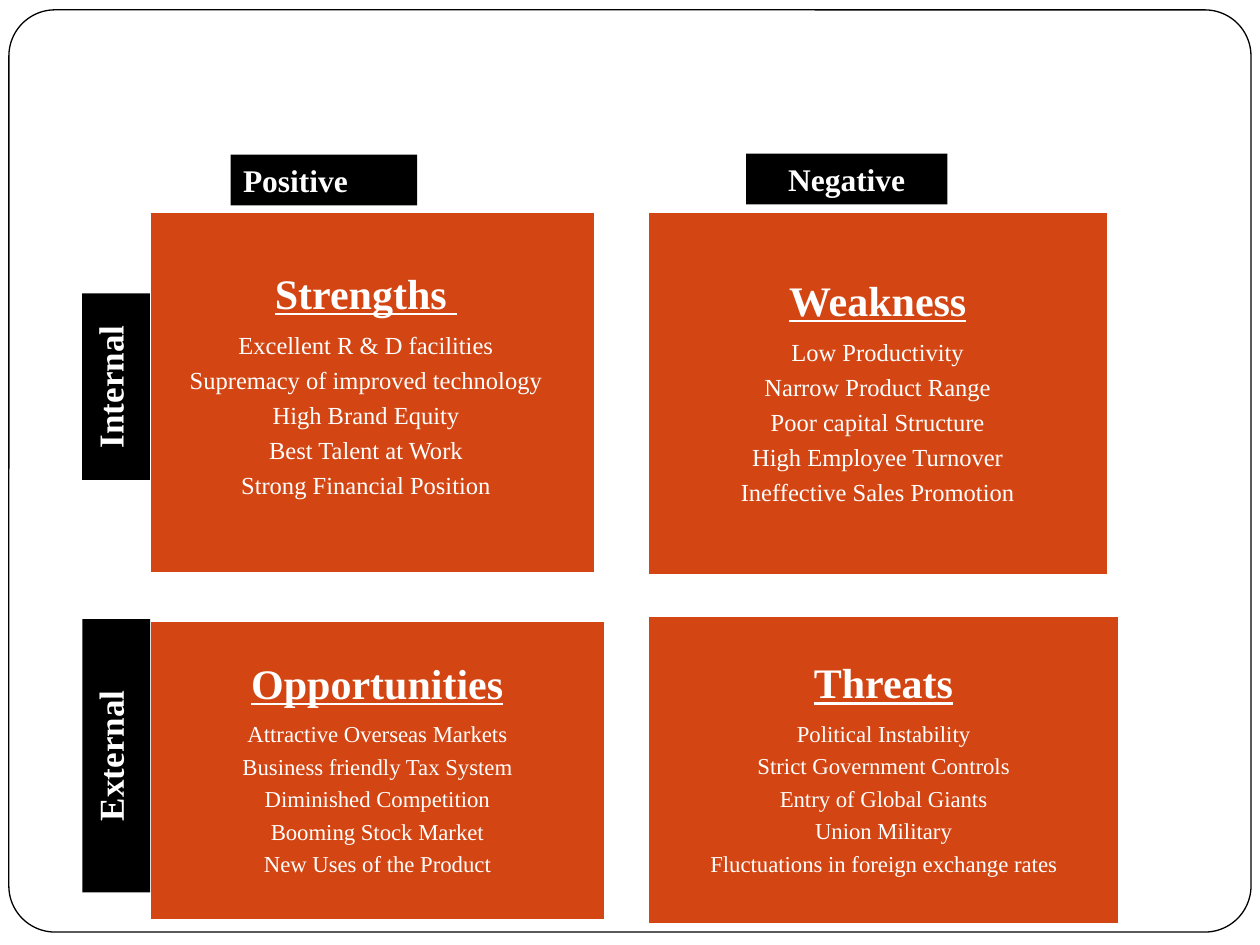
from pptx import Presentation
from pptx.dml.color import RGBColor
from pptx.enum.shapes import MSO_SHAPE
from pptx.enum.text import MSO_ANCHOR, PP_ALIGN
from pptx.util import Cm, Pt

COLORS = {"paper": "FFFFFF", "ink": "000000", "quadrant": "D34614", "text": "FFFFFF"}
QUADRANTS = [
    ("Strengths ", (3.02, 4.27, 8.97, 7.29), 14, (0, 0, 0.25, 0.25), [
        "Excellent R & D facilities", "Supremacy of improved technology",
        "High Brand Equity", "Best Talent at Work", "Strong Financial Position"]),
    ("Weakness", (13.06, 4.27, 9.27, 7.32), 14, (0.25,) * 4, [
        "Low Productivity", "Narrow Product Range", "Poor capital Structure",
        "High Employee Turnover", "Ineffective Sales Promotion"]),
    ("Opportunities", (3.02, 12.52, 9.17, 6.02), 13, (0.25,) * 4, [
        "Attractive Overseas Markets", "Business friendly Tax System",
        "Diminished Competition", "Booming Stock Market", "New Uses of the Product"]),
    ("Threats", (13.06, 12.42, 9.5, 6.2), 13, (0.25,) * 4, [
        "Political Instability", "Strict Government Controls", "Entry of Global Giants",
        "Union Military", "Fluctuations in foreign exchange rates"]),
]
AXIS_LABELS = [
    ("Internal", (0.46, 7.11, 3.76, 1.37), 20, 270, PP_ALIGN.CENTER),
    ("External", (-0.41, 14.55, 5.51, 1.37), 20, 270, PP_ALIGN.CENTER),
    ("Positive", (4.65, 3.12, 3.76, 1.02), 18, 0, PP_ALIGN.LEFT),
    ("Negative", (15.04, 3.1, 4.06, 1.02), 18, 0, PP_ALIGN.CENTER),
]


class SwotSlide:
    font = "Times New Roman"
    heading_size = 24
    line_spacing = 0.9
    space_ratio = 0.35

    def __init__(self, slide):
        self.slide = slide

    def box(self, kind, place, fill, line=None, width=1):
        shape = self.slide.shapes.add_shape(kind, *map(Cm, place))
        shape.shadow.inherit = False
        shape.fill.solid()
        shape.fill.fore_color.rgb = RGBColor.from_string(COLORS[fill])
        if line:
            shape.line.color.rgb = RGBColor.from_string(COLORS[line])
            shape.line.width = Pt(width)
        else:
            shape.line.fill.background()
        return shape

    def run(self, paragraph, text, size, bold=False, underline=False):
        run = paragraph.add_run()
        run.text = text
        run.font.name = self.font
        run.font.size = Pt(size)
        run.font.bold = bold
        run.font.underline = underline
        run.font.color.rgb = RGBColor.from_string(COLORS["text"])

    def margins(self, frame, left, top, right, bottom):
        frame.margin_left, frame.margin_top = Cm(left), Cm(top)
        frame.margin_right, frame.margin_bottom = Cm(right), Cm(bottom)

    def border(self):
        frame = self.box(MSO_SHAPE.ROUNDED_RECTANGLE, (0.18, 0.2, 25.04, 18.59),
                         "paper", "ink", 0.75)
        frame.adjustments[0] = 0.05

    def quadrant(self, heading, place, size, insets, factors):
        frame = self.box(MSO_SHAPE.RECTANGLE, place, "quadrant", "paper").text_frame
        frame.word_wrap = True
        frame.vertical_anchor = MSO_ANCHOR.MIDDLE
        self.margins(frame, *insets)
        title = frame.paragraphs[0]
        self.run(title, heading, self.heading_size, bold=True, underline=True)
        for index, factor in enumerate(factors):
            item = frame.add_paragraph()
            above = size if index else self.heading_size
            item.space_before = Pt(round(above * self.space_ratio, 1))
            self.run(item, factor, size)
        for paragraph in frame.paragraphs:
            paragraph.alignment = PP_ALIGN.CENTER
            paragraph.line_spacing = self.line_spacing

    def axis_label(self, text, place, size, rotation, alignment):
        label = self.box(MSO_SHAPE.RECTANGLE, place, "ink")
        label.rotation = rotation
        frame = label.text_frame
        frame.word_wrap = True
        frame.vertical_anchor = MSO_ANCHOR.TOP
        self.margins(frame, 0.25, 0.13, 0.25, 0.13)
        paragraph = frame.paragraphs[0]
        paragraph.alignment = alignment
        self.run(paragraph, text, size, bold=True)


def main():
    deck = Presentation()
    deck.slide_width, deck.slide_height = Cm(25.4), Cm(19.05)
    swot = SwotSlide(deck.slides.add_slide(deck.slide_layouts[6]))
    swot.border()
    for quadrant in QUADRANTS:
        swot.quadrant(*quadrant)
    for label in AXIS_LABELS:
        swot.axis_label(*label)
    deck.save("out.pptx")


if __name__ == "__main__":
    main()
